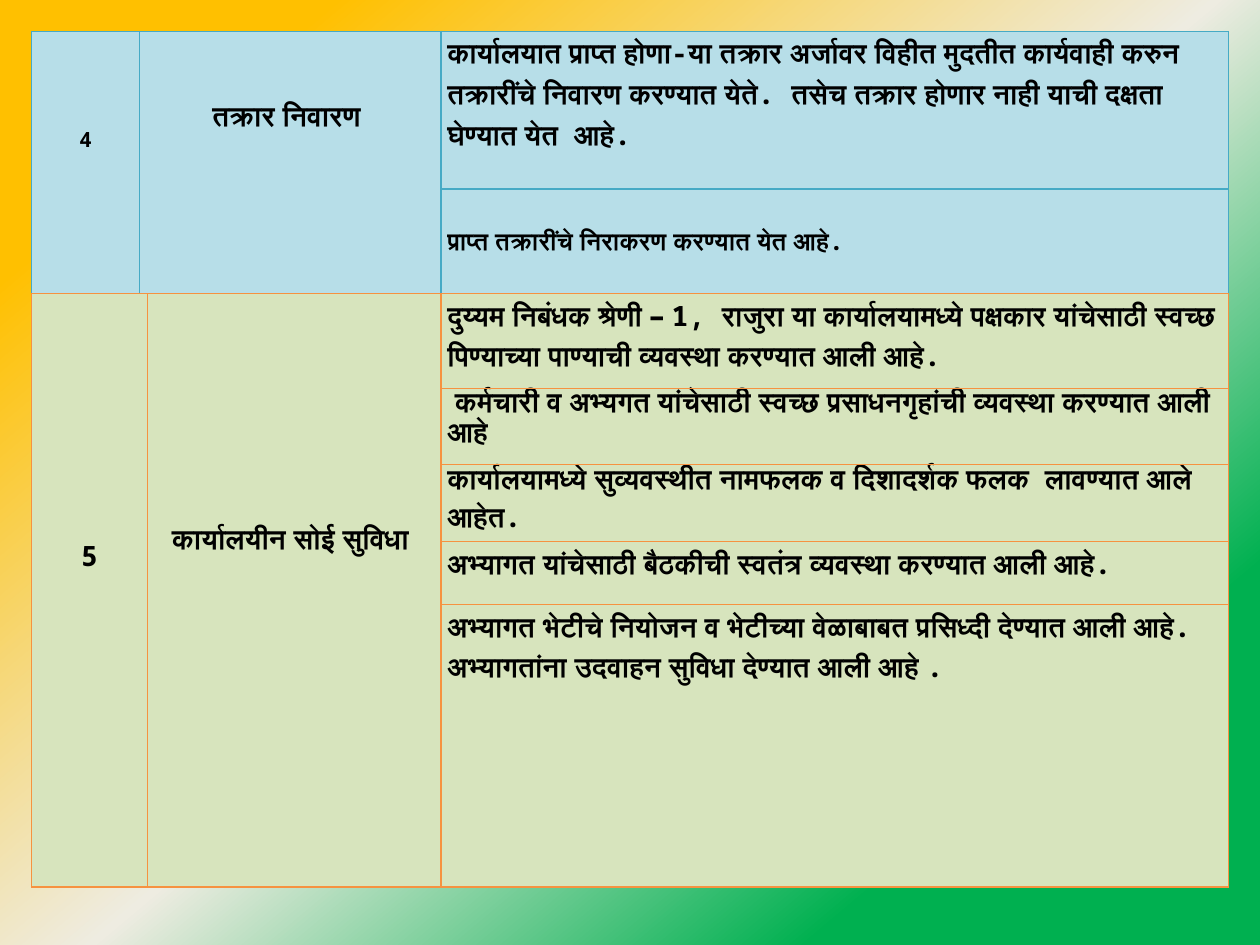
from copy import deepcopy
from dataclasses import dataclass

from lxml.etree import SubElement
from pptx import Presentation
from pptx.dml.color import RGBColor
from pptx.enum.text import PP_ALIGN
from pptx.oxml.ns import qn
from pptx.util import Inches, Pt


@dataclass(frozen=True)
class Theme:
    font: str = "Noto Sans Mono"
    text: str = "000000"
    background: tuple = ((19, "00B050"), (49, "EEECE1"), (86, "FFC000"))
    complaint_fill: str = "B7DEE8"
    complaint_border: str = "46AAC5"
    facility_fill: str = "D7E4BD"
    facility_border: str = "F69240"
    small: int = 12
    medium: int = 14
    body: int = 16
    border: float = 0.75
    line_spacing: float = 1.07


@dataclass(frozen=True)
class Entry:
    """Cell content: one string per paragraph, and its distance from the cell top."""
    paragraphs: tuple
    size: int = Theme.body
    top: float = 0
    spacing: float = Theme.line_spacing


def write_text(cell, paragraphs, *, font, color, size, spacing, align, top):
    cell.margin_left = cell.margin_right = Inches(0.05)
    cell.margin_top, cell.margin_bottom = Inches(top), 0
    frame = cell.text_frame
    for index, wording in enumerate(paragraphs):
        paragraph = frame.add_paragraph() if index else frame.paragraphs[0]
        paragraph.alignment = align
        paragraph.line_spacing = spacing
        run = paragraph.add_run()
        run.text = wording
        run.font.name = font
        run.font.size = Pt(size)
        run.font.bold = True
        run.font.color.rgb = RGBColor.from_string(color)


class SlideBuilder:
    def __init__(self, slide, theme):
        self.slide = slide
        self.theme = theme

    def background(self, angle):
        fill = self.slide.background.fill
        fill.gradient()
        fill.gradient_angle = angle
        stop_list = fill._fill._gradFill.find(qn("a:gsLst"))
        stop_list.append(deepcopy(stop_list[-1]))
        for stop, (percent, color) in zip(fill.gradient_stops, self.theme.background):
            stop.position = percent / 100
            stop.color.rgb = RGBColor.from_string(color)

    def border(self, cell, color):
        properties = cell._tc.get_or_add_tcPr()
        for index, side in enumerate(("lnL", "lnR", "lnT", "lnB")):
            line = SubElement(properties, qn(f"a:{side}"), w=str(Pt(self.theme.border)))
            solid = SubElement(line, qn("a:solidFill"))
            SubElement(solid, qn("a:srgbClr"), val=color)
            properties.insert(index, line)

    def section(self, top, widths, heights, fill, border, number, heading, details):
        """Table whose number and heading span all the detail rows."""
        frame = self.slide.shapes.add_table(
            len(heights), len(widths), Inches(0.25), Inches(top),
            Inches(sum(widths)), Inches(sum(heights)))
        table = frame.table
        table.first_row = table.horz_banding = False
        for column, width in zip(table.columns, widths):
            column.width = Inches(width)
        for row, height in zip(table.rows, heights):
            row.height = Inches(height)
        for cell in table.iter_cells():
            cell.fill.solid()
            cell.fill.fore_color.rgb = RGBColor.from_string(fill)
            self.border(cell, border)
        last_row = len(heights) - 1
        for column, entry in enumerate((number, heading)):
            cell = table.cell(0, column)
            cell.merge(table.cell(last_row, column))
            self.entry(cell, entry, PP_ALIGN.CENTER)
        for row, entry in enumerate(details):
            self.entry(table.cell(row, 2), entry, PP_ALIGN.LEFT)

    def entry(self, cell, entry, align):
        write_text(cell, entry.paragraphs, font=self.theme.font, color=self.theme.text,
                   size=entry.size, spacing=entry.spacing, align=align, top=entry.top)


def main():
    theme = Theme()
    presentation = Presentation()
    presentation.slide_width, presentation.slide_height = Inches(10), Inches(7.5)
    builder = SlideBuilder(
        presentation.slides.add_slide(presentation.slide_layouts[6]), theme)
    builder.background(angle=130)

    builder.section(
        0.25, (0.86, 2.39, 6.25), (1.25, 0.83),
        theme.complaint_fill, theme.complaint_border,
        number=Entry(("4",), theme.small, top=0.73),
        heading=Entry(("तक्रार निवारण ",), top=0.56),
        details=(
            Entry(("कार्यालयात प्राप्त होणा-या तक्रार अर्जावर विहीत मुदतीत कार्यवाही करुन "
                   "तक्रारींचे निवारण करण्यात येते. तसेच तक्रार होणार नाही याची दक्षता "
                   "घेण्यात येत  आहे.",)),
            Entry(("प्राप्त तक्रारींचे निराकरण करण्यात येत आहे.",), theme.medium, top=0.26),
        ))

    builder.section(
        2.33, (0.92, 2.33, 6.25), (0.75, 0.61, 0.61, 0.5, 2.24),
        theme.facility_fill, theme.facility_border,
        number=Entry(("5",), top=1.91),
        heading=Entry(("कार्यालयीन सोई सुविधा ",), top=1.84),
        details=(
            Entry(("दुय्यम निबंधक श्रेणी – 1, राजुरा या कार्यालयामध्ये पक्षकार यांचेसाठी "
                   "स्वच्छ पिण्याच्या पाण्याची व्यवस्था करण्यात आली आहे.",)),
            Entry((" कर्मचारी व अभ्यगत यांचेसाठी स्वच्छ प्रसाधनगृहांची व्यवस्था "
                   "करण्यात आली आहे",)),
            Entry(("कार्यालयामध्ये सुव्यवस्थीत नामफलक व दिशादर्शक फलक  लावण्यात आले "
                   "आहेत.",)),
            Entry(("अभ्यागत यांचेसाठी बैठकीची स्वतंत्र व्यवस्था करण्यात आली आहे.",)),
            Entry(("अभ्यागत भेटीचे नियोजन व भेटीच्या वेळाबाबत प्रसिध्दी देण्यात आली आहे.",
                   "अभ्यागतांना उदवाहन सुविधा देण्यात आली आहे .")),
        ))
    presentation.save("out.pptx")


if __name__ == "__main__":
    main()
